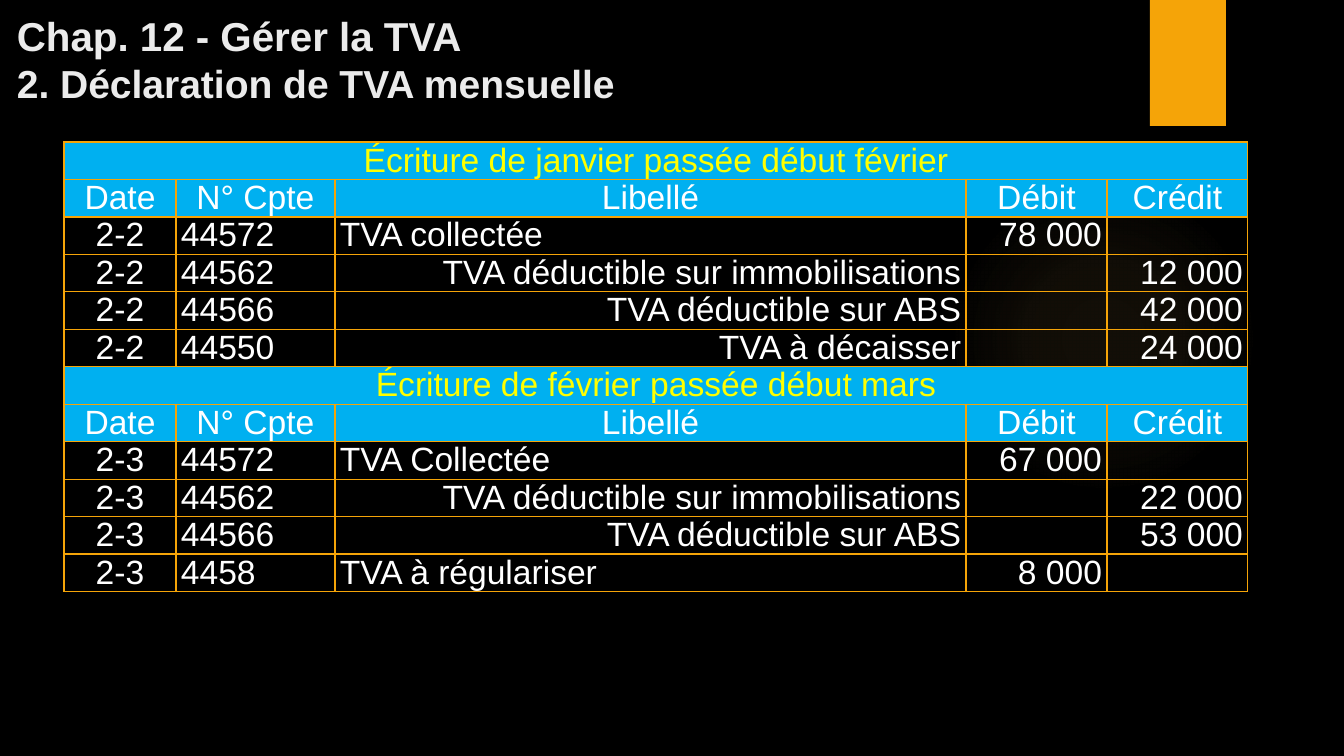
import pptx
import pptx.dml.color
import pptx.enum.shapes
import pptx.enum.text
import pptx.oxml
import pptx.oxml.ns
import pptx.util

ALIGN = pptx.enum.text.PP_ALIGN
ANCHOR = pptx.enum.text.MSO_ANCHOR
SHAPE = pptx.enum.shapes.MSO_SHAPE
NAMESPACE = pptx.oxml.ns.nsdecls("a")

COLORS = {
    "background": "000000",
    "glow": "FAC96A",
    "orange": "F5A408",
    "header": "00B0F0",
    "caption": "FFFF00",
    "body": "FFFFFF",
    "title": "EBEBEB",
}
EMU_PER_PX = 914400 / 100.8

COLUMN_WIDTHS = [112, 159, 631, 141, 141]
HEADINGS = ["Date", "N° Cpte", "Libellé", "Débit", "Crédit"]
# Each entry: caption, date, then account, label, debit, credit
ENTRIES = [
    ("Écriture de janvier passée début février", "2-2", [
        ("44572", "TVA collectée", "78 000", ""),
        ("44562", "TVA déductible sur immobilisations", "", "12 000"),
        ("44566", "TVA déductible sur ABS", "", "42 000"),
        ("44550", "TVA à décaisser", "", "24 000"),
    ]),
    ("Écriture de février passée début mars", "2-3", [
        ("44572", "TVA Collectée", "67 000", ""),
        ("44562", "TVA déductible sur immobilisations", "", "22 000"),
        ("44566", "TVA déductible sur ABS", "", "53 000"),
        ("4458", "TVA à régulariser", "8 000", ""),
    ]),
]


def px(length):
    return pptx.util.Emu(round(length * EMU_PER_PX))


def rgb(name):
    return pptx.dml.color.RGBColor.from_string(COLORS[name])


def assign(target, values):
    for name, value in values.items():
        setattr(target, name, value)


class SlideBuilder:
    """Holds the style and the current slide."""

    font_name = "Arial"

    def __init__(self, page):
        self.page = page
        page.background.fill.solid()
        page.background.fill.fore_color.rgb = rgb("background")

    def span(self, para, text, size, color, bold=False):
        span = para.add_run()
        span.text = text
        assign(span.font, {"name": self.font_name, "size": pptx.util.Pt(size), "bold": bold})
        span.font.color.rgb = rgb(color)

    def shape(self, kind, left, top, width, height):
        shape = self.page.shapes.add_shape(kind, px(left), px(top), px(width), px(height))
        shape.shadow.inherit = False
        shape.line.fill.background()
        return shape

    def block(self, left, top, width, height, color):
        block = self.shape(SHAPE.RECTANGLE, left, top, width, height)
        block.fill.solid()
        block.fill.fore_color.rgb = rgb(color)

    def glow(self, left, top, size, color, stops):
        glow = self.shape(SHAPE.OVAL, left, top, size, size)
        glow.fill.background()
        stop_list = "".join(
            f'<a:gs pos="{place * 1000}"><a:srgbClr val="{COLORS[color]}">'
            f'<a:alpha val="{alpha * 1000}"/></a:srgbClr></a:gs>'
            for place, alpha in stops)
        gradient = pptx.oxml.parse_xml(
            f'<a:gradFill {NAMESPACE}><a:gsLst>{stop_list}</a:gsLst><a:path path="circle">'
            '<a:fillToRect l="50000" t="50000" r="50000" b="50000"/></a:path></a:gradFill>')
        properties = glow.element.spPr
        properties.replace(properties.find(pptx.oxml.ns.qn("a:noFill")), gradient)

    def title(self, left, top, width, height, lines):
        box = self.page.shapes.add_textbox(px(left), px(top), px(width), px(height))
        assign(box.text_frame, {"word_wrap": True, "vertical_anchor": ANCHOR.BOTTOM})
        para = box.text_frame.paragraphs[0]
        para.line_spacing = pptx.util.Pt(33.5)
        for index, (text, size) in enumerate(lines):
            if index:
                para.add_line_break()
            self.span(para, text, size, "title", bold=True)

    def cell(self, cell, text, align, color="body", fill=None):
        assign(cell, {"margin_left": px(5), "margin_right": px(5),
                      "margin_top": 0, "margin_bottom": 0})
        para = cell.text_frame.paragraphs[0]
        assign(para, {"alignment": align, "line_spacing": pptx.util.Pt(26.5)})
        if text:
            self.span(para, text, 24, color)
        self.borders(cell)
        if fill:
            cell.fill.solid()
            cell.fill.fore_color.rgb = rgb(fill)
        else:
            cell.fill.background()

    def borders(self, cell):
        properties = cell._tc.get_or_add_tcPr()
        for index, side in enumerate(("lnL", "lnR", "lnT", "lnB")):
            properties.insert(index, pptx.oxml.parse_xml(
                f'<a:{side} {NAMESPACE} w="12700"><a:solidFill>'
                f'<a:srgbClr val="{COLORS["orange"]}"/></a:solidFill></a:{side}>'))

    def journal(self, left, top, height, entries):
        row_count = sum(2 + len(lines) for _, _, lines in entries)
        table = self.page.shapes.add_table(
            row_count, len(COLUMN_WIDTHS), px(left), px(top),
            px(sum(COLUMN_WIDTHS)), px(height)).table
        assign(table, {"first_row": False, "horz_banding": False})
        for column, width in zip(table.columns, COLUMN_WIDTHS):
            column.width = px(width)
        for row in table.rows:
            row.height = px(height / row_count)

        rows = iter(table.rows)
        for caption, date, lines in entries:
            # Caption across all columns
            cells = list(next(rows).cells)
            cells[0].merge(cells[-1])
            for cell, text in zip(cells, [caption, "", "", "", ""]):
                self.cell(cell, text, ALIGN.CENTER, "caption", "header")
            # Column headings
            for cell, heading in zip(next(rows).cells, HEADINGS):
                self.cell(cell, heading, ALIGN.CENTER, fill="header")
            # Credited accounts have their label on the right
            for account, label, debit, credit in lines:
                label_align = ALIGN.RIGHT if credit else ALIGN.LEFT
                aligns = [ALIGN.CENTER, ALIGN.LEFT, label_align, ALIGN.RIGHT, ALIGN.RIGHT]
                texts = [date, account, label, debit, credit]
                for cell, text, align in zip(next(rows).cells, texts, aligns):
                    self.cell(cell, text, align)


def main():
    deck = pptx.Presentation()
    assign(deck, {"slide_width": px(1344), "slide_height": px(756)})
    builder = SlideBuilder(deck.slides.add_slide(deck.slide_layouts[6]))

    # Backdrop
    builder.glow(949, 184, 310, "glow", [(0, 7), (36, 6), (69, 0), (100, 0)])
    builder.block(1150, 0, 76, 126, "orange")

    # Journal entries and title
    builder.journal(64, 142, 450, ENTRIES)
    builder.title(7, 0, 973, 111, [
        ("Chap. 12 - Gérer la TVA", 28.8),
        ("2. Déclaration de TVA mensuelle", 27.9),
    ])
    deck.save("out.pptx")


if __name__ == "__main__":
    main()
